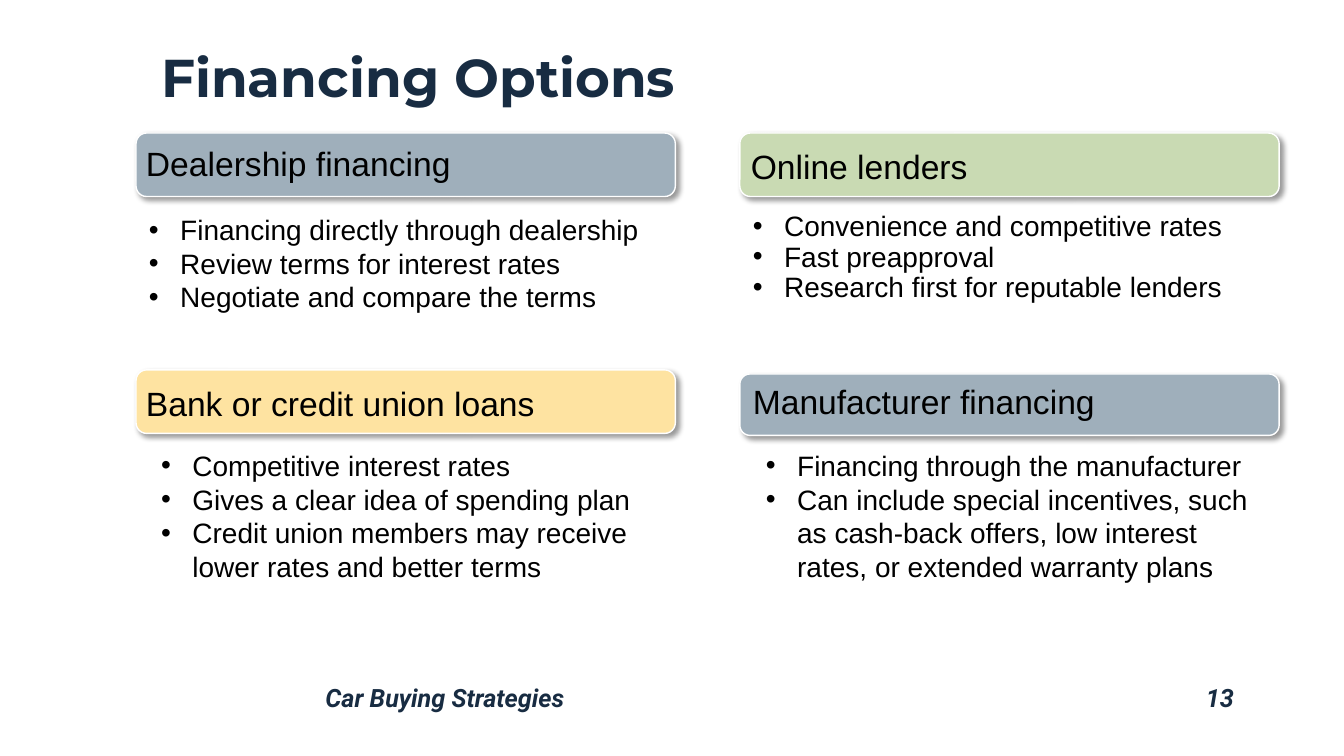
from lxml import etree
from pptx import Presentation
from pptx import util as u
from pptx.dml.color import RGBColor
from pptx.enum import shapes, text
from pptx.oxml import ns

COLORS = {"navy": "182C42", "black": "000000", "white": "FFFFFF",
          "slate": "9FAFBB", "sand": "FEE3A1", "sage": "C9DAB3"}
TOP, MIDDLE, BOTTOM = (text.MSO_ANCHOR.TOP, text.MSO_ANCHOR.MIDDLE,
                       text.MSO_ANCHOR.BOTTOM)
LEFT, RIGHT = text.PP_ALIGN.LEFT, text.PP_ALIGN.RIGHT
FOOTER = dict(font="Roboto", size=18, color="navy", bold=True, italic=True,
              spacing=0.9)

OPTIONS = [
    dict(bar=(4.05, 5.28, 16.05, 2.52), color="slate",
         heading="Dealership financing", heading_at=(4.05, 5.24, 16.05, 2.68),
         points=["Financing directly through dealership",
                 "Review terms for interest rates",
                 "Negotiate and compare the terms"],
         points_at=(4.14, 8.24, 16.05, 5.96)),
    dict(bar=(4.05, 14.68, 16.05, 2.52), color="sand",
         heading="Bank or credit union loans",
         heading_at=(4.05, 14.64, 16.14, 2.88),
         points=["Competitive interest rates",
                 "Gives a clear idea of spending plan",
                 "Credit union members may receive lower rates and better terms"],
         points_at=(4.5, 17.6, 15.63, 5.48)),
    dict(bar=(22.02, 5.28, 16.05, 2.52), color="sage",
         heading="Online lenders", heading_at=(22.05, 5, 15.99, 3.4),
         points=["Convenience and competitive rates",
                 "Fast preapproval",
                 "Research first for reputable lenders"],
         points_at=(22.11, 8.24, 14.91, 6.12), spacing=0.9),
    dict(bar=(22.02, 14.84, 16.05, 2.44), color="slate",
         heading="Manufacturer financing",
         heading_at=(22.11, 15.12, 16.5, 2.8), anchor=TOP,
         points=["Financing through the manufacturer",
                 "Can include special incentives, such as cash-back offers, "
                 "low interest rates, or extended warranty plans"],
         points_at=(22.5, 17.6, 15.27, 5.76)),
]


class SlideBuilder:
    """Draws styled elements on a slide grid of 40 columns and 30 rows."""

    def __init__(self, deck):
        self.column = deck.slide_width / 40
        self.row = deck.slide_height / 30
        self.slide = deck.slides.add_slide(deck.slide_layouts[6])

    def place(self, cells):
        left, top, width, height = cells
        return [round(length) for length in (
            left * self.column, top * self.row,
            width * self.column, height * self.row)]

    def color(self, name):
        return RGBColor.from_string(COLORS[name])

    def bar(self, cells, fill):
        bar = self.slide.shapes.add_shape(
            shapes.MSO_SHAPE.ROUNDED_RECTANGLE, *self.place(cells))
        bar.fill.solid()
        bar.fill.fore_color.rgb = self.color(fill)
        bar.line.color.rgb = self.color("white")
        bar.line.width = u.Pt(1)
        bar.shadow.inherit = False
        effects = bar._element.spPr.find(ns.qn("a:effectLst"))
        shadow = etree.SubElement(
            effects, ns.qn("a:outerShdw"), blurRad=str(u.Pt(4)),
            dist=str(u.Pt(3)), dir="2700000", algn="tl", rotWithShape="0")
        tint = etree.SubElement(shadow, ns.qn("a:srgbClr"), val=COLORS["black"])
        etree.SubElement(tint, ns.qn("a:alpha"), val="40000")

    def bullet(self, para):
        indent = round(0.93 * self.column)
        props = para._p.get_or_add_pPr()
        props.set("marL", str(indent))
        props.set("indent", str(-indent))
        etree.SubElement(props, ns.qn("a:buFont"), typeface="Arial")
        etree.SubElement(props, ns.qn("a:buChar"), char="•")

    def add_text(self, cells, *lines, font="Arial", size=20, color="black",
                 bold=False, italic=False, spacing=1.0, anchor=TOP, align=LEFT,
                 bullets=False):
        box = self.slide.shapes.add_textbox(*self.place(cells))
        frame = box.text_frame
        frame.word_wrap = True
        frame.vertical_anchor = anchor
        for index, line in enumerate(lines):
            para = frame.add_paragraph() if index else frame.paragraphs[0]
            if bullets:
                self.bullet(para)
            para.alignment = align
            para.line_spacing = spacing
            span = para.add_run()
            span.text = line
            span.font.name = font
            span.font.size = u.Pt(size)
            span.font.bold = bold
            span.font.italic = italic
            span.font.color.rgb = self.color(color)

    def option(self, bar, color, heading, heading_at, points, points_at,
               anchor=MIDDLE, spacing=1.0):
        self.bar(bar, color)
        self.add_text(heading_at, heading, size=24, spacing=0.9, anchor=anchor)
        self.add_text(points_at, *points, spacing=spacing, bullets=True)


def main():
    deck = Presentation()
    deck.slide_width, deck.slide_height = u.Inches(13.33), u.Inches(7.5)
    page = SlideBuilder(deck)
    page.add_text((4.5, 0.44, 32.52, 4.08), "Financing Options",
                  font="Montserrat", size=38, color="navy", bold=True,
                  spacing=0.9, anchor=BOTTOM)
    for option in OPTIONS:
        page.option(**option)
    page.add_text((9.39, 27, 22.89, 1.52), "Car Buying Strategies", **FOOTER)
    page.add_text((32.28, 27, 4.74, 1.52), "13", align=RIGHT, **FOOTER)
    deck.save("out.pptx")


if __name__ == "__main__":
    main()
